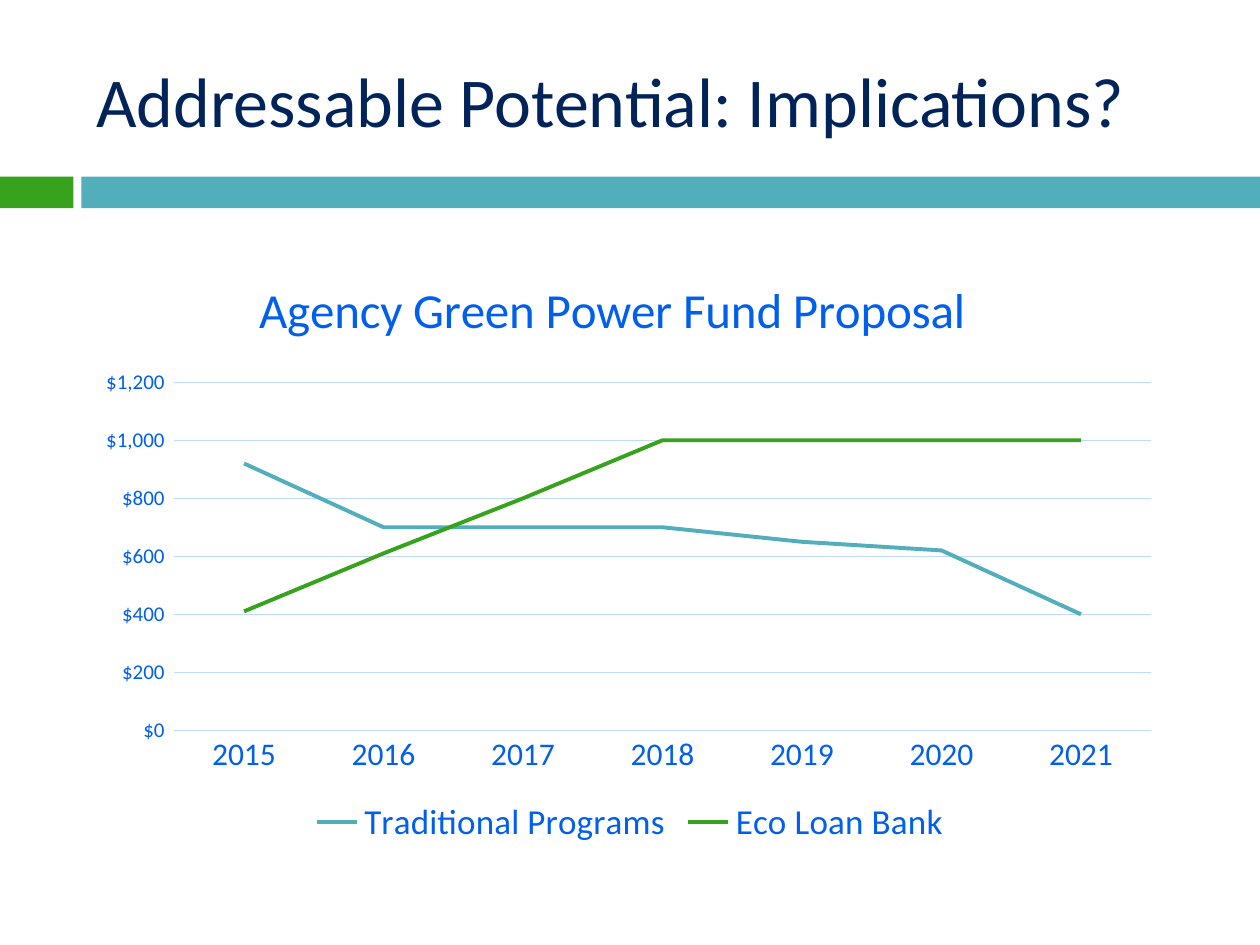
import pptx
import pptx.chart.data
import pptx.dml.color
import pptx.enum.chart
import pptx.enum.shapes
import pptx.enum.text
import pptx.oxml
import pptx.oxml.ns
import pptx.util

Pt = pptx.util.Pt
RGB = pptx.dml.color.RGBColor
NAVY = RGB(0x00, 0x24, 0x5A)
BLUE = RGB(0x00, 0x5F, 0xED)
PALE = RGB(0xC0, 0xD9, 0xFF)
TEAL = RGB(0x52, 0xAE, 0xBA)
GREEN = RGB(0x37, 0xA3, 0x1D)
FACE = "Calibri"

YEARS = ["2015", "2016", "2017", "2018", "2019", "2020", "2021"]
FUNDS = [
    ("Traditional Programs", TEAL, [920, 700, 700, 700, 650, 620, 400]),
    ("Eco Loan Bank", GREEN, [410, 610, 800, 1000, 1000, 1000, 1000]),
]


def style(font, size, color):
    font.name = FACE
    font.size = Pt(size)
    font.bold = False
    font.color.rgb = color


def place(parent, index, **parts):
    """Give a chart part a fixed place, in fractions of the chart."""
    for old in parent.findall(pptx.oxml.ns.qn("c:layout")):
        parent.remove(old)
    target = '<c:layoutTarget val="inner"/>' if "w" in parts else ""
    modes = "".join(f'<c:{key}Mode val="edge"/>' for key in "xy")
    sizes = "".join(f'<c:{key} val="{val}"/>' for key, val in parts.items())
    parent.insert(index, pptx.oxml.parse_xml(
        f'<c:layout {pptx.oxml.ns.nsdecls("c")}><c:manualLayout>'
        f'{target}{modes}{sizes}</c:manualLayout></c:layout>'))


def add_title(slide, left, top, width, height):
    box = slide.shapes.add_textbox(Pt(left), Pt(top), Pt(width), Pt(height))
    frame = box.text_frame
    frame.word_wrap = True
    frame.vertical_anchor = pptx.enum.text.MSO_ANCHOR.MIDDLE
    run = frame.paragraphs[0].add_run()
    run.text = "Addressable Potential: Implications?"
    style(run.font, 40, NAVY)


def add_band(slide, left, top, width, height):
    # Short green block, gap, then teal to the right edge
    block, gap = 42, 4.5
    start = block + gap
    for color, x, span in ((GREEN, 0, block), (TEAL, start, width - start)):
        bar = slide.shapes.add_shape(
            pptx.enum.shapes.MSO_SHAPE.RECTANGLE,
            Pt(left + x), Pt(top), Pt(span), Pt(height))
        bar.shadow.inherit = False
        bar.fill.solid()
        bar.fill.fore_color.rgb = color
        bar.line.fill.background()


def add_chart(slide, left, top, width, height):
    data = pptx.chart.data.CategoryChartData()
    data.categories = YEARS
    for name, _, vals in FUNDS:
        data.add_series(name, vals)
    chart = slide.shapes.add_chart(
        pptx.enum.chart.XL_CHART_TYPE.LINE,
        Pt(left), Pt(top), Pt(width), Pt(height), data).chart
    style(chart.font, 10, NAVY)

    # Heading and plot area
    run = chart.chart_title.text_frame.paragraphs[0].add_run()
    run.text = "Agency Green Power Fund Proposal"
    style(run.font, 28, BLUE)
    chart.chart_title.include_in_layout = False
    root = chart.element.chart
    place(root.find(pptx.oxml.ns.qn("c:title")), 1, x=0.15, y=0.03)
    place(root.plotArea, 0, x=0.08, y=0.22, w=0.9, h=0.58)

    # Lines
    plot = chart.plots[0]
    plot.vary_by_categories = False
    for line, (_, color, _) in zip(plot.series, FUNDS):
        line.smooth = False
        line.marker.style = pptx.enum.chart.XL_MARKER_STYLE.NONE
        line.format.line.color.rgb = color
        line.format.line.width = Pt(2.25)

    # Axes
    years, money = chart.category_axis, chart.value_axis
    for axis, size in ((years, 18), (money, 12)):
        style(axis.tick_labels.font, size, BLUE)
        axis.major_tick_mark = pptx.enum.chart.XL_TICK_MARK.NONE
        axis.minor_tick_mark = pptx.enum.chart.XL_TICK_MARK.NONE
    money.minimum_scale, money.maximum_scale, money.major_unit = 0, 1200, 200
    money.tick_labels.number_format = '"$"#,##0_);[Red]\\("$"#,##0\\)'
    money.tick_labels.number_format_is_linked = False
    money.has_major_gridlines = True
    money.format.line.fill.background()
    for rule in (years.format.line, money.major_gridlines.format.line):
        rule.color.rgb = PALE
        rule.width = Pt(0.75)

    # Legend
    chart.has_legend = True
    chart.legend.position = pptx.enum.chart.XL_LEGEND_POSITION.BOTTOM
    chart.legend.include_in_layout = False
    style(chart.legend.font, 20, BLUE)


def main():
    deck = pptx.Presentation()
    deck.slide_width, deck.slide_height = Pt(720), Pt(540)
    slide = deck.slides.add_slide(deck.slide_layouts[6])
    add_band(slide, 0, 101, 720, 18)
    add_title(slide, 48, 18, 642, 78)
    add_chart(slide, 50, 143, 620, 343)
    deck.save("out.pptx")


if __name__ == "__main__":
    main()
